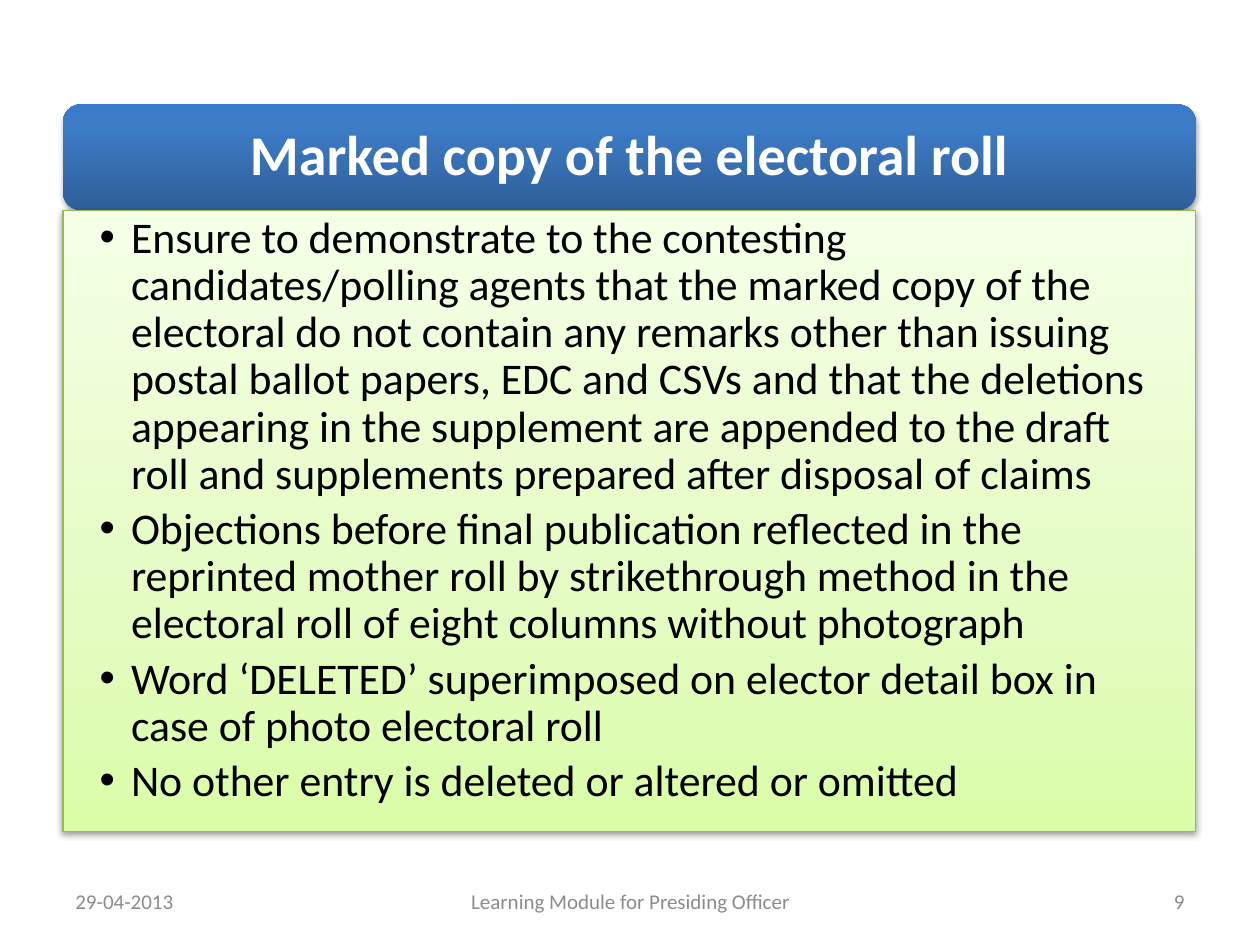
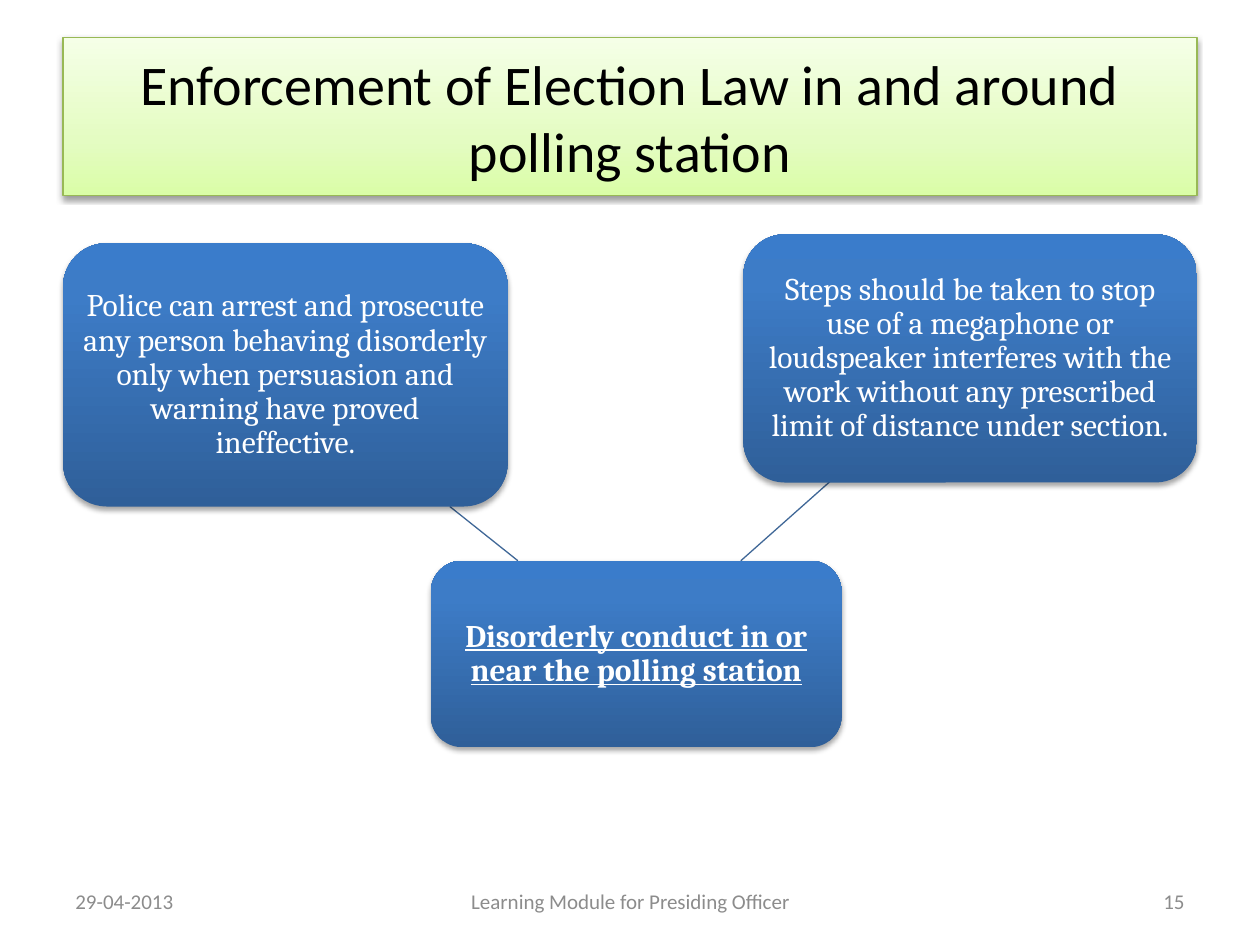
from lxml.etree import SubElement
from pptx import Presentation
from pptx.dml.color import RGBColor
from pptx.enum.shapes import MSO_CONNECTOR, MSO_SHAPE
from pptx.enum.text import MSO_ANCHOR, PP_ALIGN
from pptx.oxml import parse_xml
from pptx.oxml.ns import nsdecls, qn
from pptx.util import Pt

PX = 9144  # 100 px to the inch
MARGIN = 50
BLUE = ((0, "2F5F99"), (80, "3D7CC7"), (100, "3A7CCB"))
GREEN = ((0, "DAFDA7"), (35, "E4FCC2"), (100, "F5FFE7"))
GREEN_LINE, BLUE_LINE = "98B955", "3F6797"
WHITE, BLACK, GREY = "FFFFFF", "000000", "8C8C8C"
LEFT, CENTER, RIGHT = PP_ALIGN.LEFT, PP_ALIGN.CENTER, PP_ALIGN.RIGHT

ROLL_POINTS = [
    "Ensure to demonstrate to the contesting candidates/polling agents that the marked copy "
    "of the electoral do not contain any remarks other than issuing postal ballot papers, EDC "
    "and CSVs and that the deletions appearing in the supplement are appended to the draft roll "
    "and supplements prepared after disposal of claims",
    "Objections before final publication reflected in the reprinted mother roll by "
    "strikethrough method in the electoral roll of eight columns without photograph",
    "Word ‘DELETED’ superimposed on elector detail box in case of photo electoral roll",
    "No other entry is deleted or altered or omitted",
]


def color(hex_string):
    return RGBColor.from_string(hex_string)


def px(*lengths):
    return [n * PX for n in lengths]


def write(tf, text, size=18, font="Calibri", fill=BLACK, align=CENTER, bold=None,
          underline=None, spacing=None, after=0, bullet_indent=0):
    """Fill the frame with one paragraph for each line of text."""
    for i, line in enumerate(text.split("\n")):
        p = tf.paragraphs[0] if i == 0 else tf.add_paragraph()
        p.alignment, p.line_spacing, p.space_after = align, spacing, Pt(after)
        if bullet_indent:
            pPr = p._p.get_or_add_pPr()
            pPr.set("marL", str(bullet_indent * PX))
            pPr.set("indent", str(-bullet_indent * PX))
            SubElement(pPr, qn("a:buFont"), typeface="Arial")
            SubElement(pPr, qn("a:buChar"), char="•")
        r = p.add_run()
        r.text = line
        r.font.size, r.font.name = Pt(size), font
        r.font.bold, r.font.underline = bold, underline
        r.font.color.rgb = color(fill)


class Deck:
    def __init__(self):
        self.prs = Presentation()
        self.prs.slide_width, self.prs.slide_height = px(1000, 750)
        self.s = None

    def slide(self, number):
        self.s = self.prs.slides.add_slide(self.prs.slide_layouts[6])
        for x, w, text, align in ((MARGIN, 233, "29-04-2013", LEFT),
                                  (342, 317, "Learning Module for Presiding Officer", CENTER),
                                  (717, 233, str(number), RIGHT)):
            tf = self.s.shapes.add_textbox(*px(x, 695, w, 40)).text_frame
            self.frame(tf)
            write(tf, text, size=12, fill=GREY, align=align)

    def frame(self, tf, insets=(10, 5, 10, 5), anchor=MSO_ANCHOR.MIDDLE):
        tf.word_wrap, tf.vertical_anchor = True, anchor
        tf.margin_left, tf.margin_top, tf.margin_right, tf.margin_bottom = px(*insets)

    def box(self, kind, at, stops, shadow, text, line=None, insets=(10, 5, 10, 5),
            anchor=MSO_ANCHOR.MIDDLE, **style):
        """Add a shape with a bottom-to-top gradient; shadow is (opacity %, distance pt)."""
        sp = self.s.shapes.add_shape(kind, *px(*at))
        sp.fill.background()
        gs = "".join(f'<a:gs pos="{pos * 1000}"><a:srgbClr val="{c}"/></a:gs>' for pos, c in stops)
        spPr = sp._element.spPr
        spPr.replace(spPr.find(qn("a:noFill")), parse_xml(
            f'<a:gradFill {nsdecls("a")} rotWithShape="1"><a:gsLst>{gs}</a:gsLst>'
            '<a:lin ang="16200000" scaled="0"/></a:gradFill>'))
        if line:
            sp.line.color.rgb, sp.line.width = color(line), Pt(0.75)
        else:
            sp.line.fill.background()
        sp.shadow.inherit = False
        opacity, distance = shadow
        spPr.find(qn("a:effectLst")).append(parse_xml(
            f'<a:outerShdw {nsdecls("a")} blurRad="{Pt(3.1)}" dist="{Pt(distance)}" '
            f'dir="5400000" rotWithShape="0"><a:srgbClr val="{BLACK}">'
            f'<a:alpha val="{opacity * 1000}"/></a:srgbClr></a:outerShdw>'))
        self.frame(sp.text_frame, insets, anchor)
        write(sp.text_frame, text, **style)

    def panel(self, at, text, **style):
        self.box(MSO_SHAPE.RECTANGLE, at, GREEN, (38, 1.6), text, line=GREEN_LINE, **style)

    def rounded(self, at, text, **style):
        self.box(MSO_SHAPE.ROUNDED_RECTANGLE, at, BLUE, (35, 1.8), text,
                 fill=WHITE, spacing=0.9, **style)

    def node(self, at, text, **style):
        self.rounded(at, text, insets=(5, 5, 5, 5), font="Cambria", **style)

    def link(self, *ends):
        c = self.s.shapes.add_connector(MSO_CONNECTOR.STRAIGHT, *px(*ends))
        c.line.color.rgb, c.line.width = color(BLUE_LINE), Pt(0.75)
        SubElement(c._element.spPr, qn("a:effectLst"))


def marked_copy(deck):
    deck.slide(9)
    deck.rounded((MARGIN, 83, 899, 84), "Marked copy of the electoral roll",
                 insets=(13, 13, 13, 13), size=32, bold=True)
    deck.panel((MARGIN, 167, 899, 493), "\n".join(ROLL_POINTS), insets=(29, 4, 25, 4),
               anchor=MSO_ANCHOR.TOP, size=25, align=LEFT, spacing=0.9, after=4.5,
               bullet_indent=25)


def election_law(deck):
    deck.slide(15)
    deck.panel((MARGIN, 30, 900, 125),
               "Enforcement of Election Law in and around polling station", size=32)
    deck.link(411, 445, 357, 402)
    deck.link(588, 445, 659, 382)
    deck.node((342, 445, 326, 148), "Disorderly conduct in or near the polling station",
              bold=True, underline=True)
    deck.node((MARGIN, 193, 353, 209),
              "Police can arrest and prosecute any person behaving disorderly only when "
              "persuasion and warning have proved ineffective.")
    deck.node((590, 186, 360, 197),
              "Steps should be taken to stop use of a megaphone or loudspeaker interferes with "
              "the work without any prescribed limit of distance under section.")


def main():
    deck = Deck()
    marked_copy(deck)
    election_law(deck)
    deck.prs.save("out.pptx")


if __name__ == "__main__":
    main()
